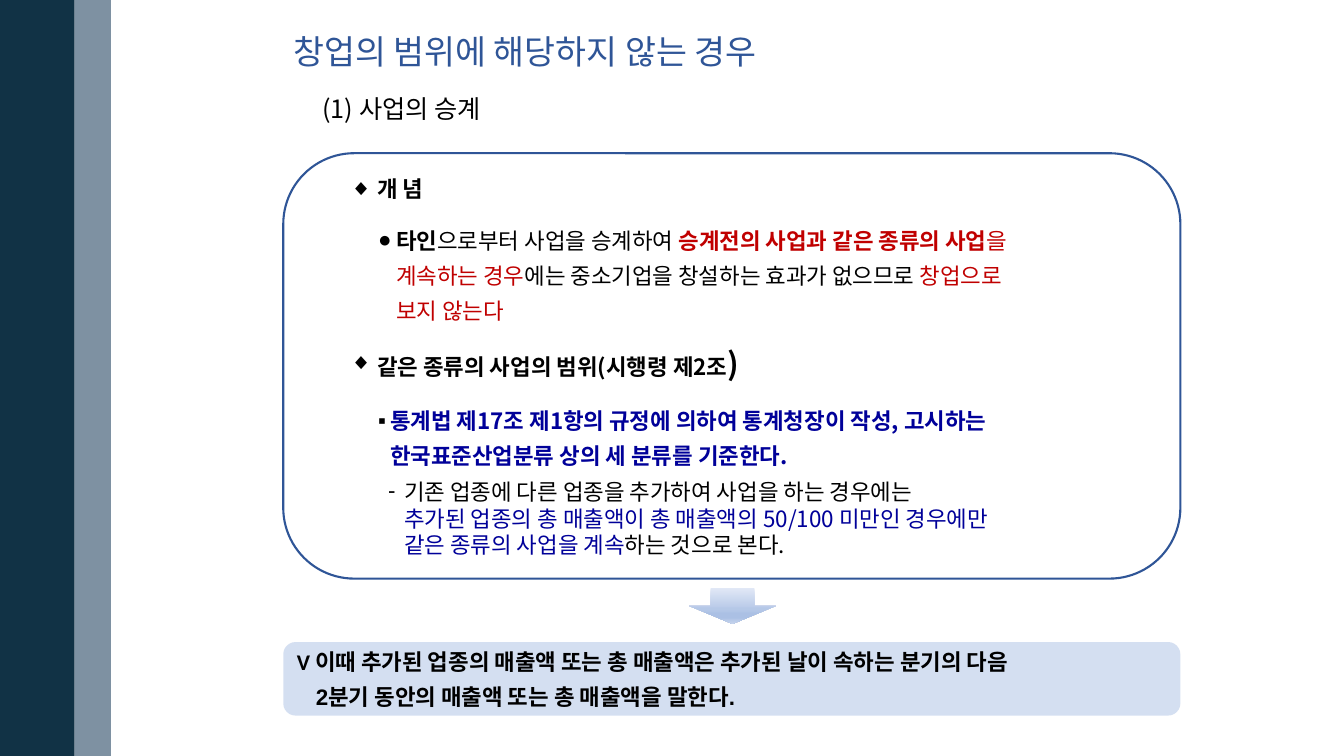
from collections import namedtuple

from lxml.etree import SubElement
from pptx import Presentation
from pptx.dml.color import RGBColor
from pptx.enum.shapes import MSO_SHAPE
from pptx.enum.text import MSO_ANCHOR, MSO_AUTO_SIZE, PP_ALIGN
from pptx.oxml.ns import qn
from pptx.util import Inches, Pt

COLORS = {
    "navy": "113245", "slate": "7E91A2", "blue": "2F5597", "black": "000000",
    "red": "C00000", "indigo": "000099", "pale": "B4C7E7",
}
ARROW_STOPS = [(0, "E1E8F6"), (74, "ABC0E4"), (83, "ABC0E4"), (100, "C7D5ED")]
KOREAN = "Noto Sans CJK KR"
SLIDE_W, SLIDE_H = Inches(13.33), Inches(7.5)

Box = namedtuple("Box", "left top width height")


def inside(box, dx, dy, width, height):
    """Return a box offset from the corner of another, in percent of the slide."""
    return Box(box.left + dx, box.top + dy, width, height)


def emu(box):
    """Turn a box in percent of the slide into lengths."""
    return (int(SLIDE_W * box.left / 100), int(SLIDE_H * box.top / 100),
            int(SLIDE_W * box.width / 100), int(SLIDE_H * box.height / 100))


def add_block(slide, box, preset, fill=None, line=None):
    """Draw a preset shape without shadow."""
    block = slide.shapes.add_shape(preset, *emu(box))
    block.shadow.inherit = False
    if fill:
        block.fill.solid()
        block.fill.fore_color.rgb = RGBColor.from_string(COLORS[fill])
    else:
        block.fill.background()
    if line:
        block.line.color.rgb = RGBColor.from_string(COLORS[line])
        block.line.width = Pt(1.5)
    else:
        block.line.fill.background()
    return block


def move(holder, box):
    """Place a placeholder and return its text frame, ready for text."""
    holder.left, holder.top, holder.width, holder.height = emu(box)
    frame = holder.text_frame
    frame.auto_size = MSO_AUTO_SIZE.NONE
    frame.word_wrap = True
    frame.vertical_anchor = MSO_ANCHOR.TOP
    return frame


def style(font, size=None, bold=None, color=None, name=None):
    """Set the given properties of a font."""
    if size:
        font.size = Pt(size)
    if bold is not None:
        font.bold = bold
    if color:
        font.color.rgb = RGBColor.from_string(COLORS[color])
    if name:
        font.name = name


def write(frame, runs, bullet=None, margin=0, hang=0, size=16, pitch=19.2,
          bold=False, color="black", name=KOREAN):
    """Write a paragraph; a run is text, or text with its own font settings."""
    first = not frame.text
    paragraph = frame.paragraphs[0] if first else frame.add_paragraph()
    props = paragraph._p.get_or_add_pPr()
    props.set("marL", str(Inches(margin)))
    props.set("indent", str(-Inches(hang)))
    if bullet:
        bullet_color = SubElement(props, qn("a:buClr"))
        SubElement(bullet_color, qn("a:srgbClr"), val=COLORS["black"])
        SubElement(props, qn("a:buFont"), typeface="Arial")
        SubElement(props, qn("a:buChar"), char=bullet)
    else:
        SubElement(props, qn("a:buNone"))
    paragraph.alignment = PP_ALIGN.LEFT
    paragraph.line_spacing = Pt(pitch)
    paragraph.space_before = Pt(0 if first else 6)
    style(paragraph.font, size, bold, color, name)
    SubElement(props.find(qn("a:defRPr")), qn("a:ea"), typeface=KOREAN)
    for item in runs:
        text, own = (item, {}) if isinstance(item, str) else item
        if text == "\n":
            paragraph.add_line_break()
            continue
        run = paragraph.add_run()
        run.text = text
        style(run.font, **own)


def draw_sidebar(slide, box):
    """Draw the two vertical bands at the left edge."""
    dark = 5.55
    add_block(slide, box._replace(width=dark), MSO_SHAPE.RECTANGLE, "navy")
    add_block(slide, inside(box, dark, 0, box.width - dark, box.height),
              MSO_SHAPE.RECTANGLE, "slate")


def draw_header(slide, box):
    """Write the title and the numbered subtitle."""
    title = move(slide.shapes.title, box)
    title.vertical_anchor = MSO_ANCHOR.MIDDLE
    write(title, ["창업의 범위에 해당하지 않는 경우"], size=24, pitch=26, color="blue")
    subtitle = slide.shapes.add_textbox(*emu(inside(box, 2.17, 12, 15.83, 4.93)))
    subtitle.text_frame.word_wrap = True
    write(subtitle.text_frame, ["(1) 사업의 승계"], size=18, pitch=20)


def draw_panel(slide, box):
    """Draw the rounded panel with its two headed lists."""
    add_block(slide, box, MSO_SHAPE.ROUNDED_RECTANGLE, line="blue")
    holders = slide.placeholders
    red, indigo = {"color": "red"}, {"color": "indigo"}

    concept = move(holders[1], inside(box, 4.2, 2.27, 75.2, 6.67))
    write(concept, ["개 념"], "◆", 0.27, 0.27, bold=True)

    meaning = move(holders[2], inside(box, 6.3, 9.07, 72.2, 14.4))
    write(meaning, [("타인", {"bold": True}), "으로부터 사업을 승계하여 ",
                    ("승계전의 사업과 같은 종류의 사업", {"color": "red", "bold": True}),
                    ("을", red)], "●", 0.18, 0.18)
    write(meaning, [("계속하는 경우", red), "에는 중소기업을 창설하는 효과가 없으므로 ",
                    ("창업으로", red)], margin=0.18)
    write(meaning, ["보지 않는다"], margin=0.18, color="red")

    scope = move(holders[3], inside(box, 4.2, 24.53, 75.1, 7.47))
    write(scope, ["같은 종류의 사업의 범위(시행령 제2조", (")", {"size": 22})],
          "◆", 0.27, 0.27, pitch=27, bold=True)

    standard = move(holders[4], inside(box, 6.3, 32.93, 72.6, 26.27))
    write(standard, ["통계법 제17조 제1항의 규정에 의하여 통계청장이 작성, 고시하는"],
          "▪", 0.12, 0.12, bold=True, color="indigo")
    write(standard, ["한국표준산업분류 상의 세 분류를 기준한다."],
          margin=0.12, bold=True, color="indigo")
    write(standard, ["기존 업종에 다른 업종을 추가하여 사업을 하는 경우에는", "\n",
                     ("추가된 업종의 총 매출액이 총 매출액의 50/100 미만인 경우에만", indigo), "\n",
                     ("같은 종류의 사업을 계속", indigo), "하는 것으로 본다."],
          "-", 0.26, 0.16)


def draw_arrow(slide, box):
    """Draw the shaded arrow that leads to the note."""
    arrow = add_block(slide, box, MSO_SHAPE.DOWN_ARROW)
    arrow.fill.gradient()
    arrow.fill.gradient_angle = 270
    stops = arrow._element.spPr.find(".//" + qn("a:gsLst"))
    for stop in list(stops):
        stops.remove(stop)
    for share, color in ARROW_STOPS:
        stop = SubElement(stops, qn("a:gs"), pos=str(share * 1000))
        SubElement(stop, qn("a:srgbClr"), val=color)


def draw_note(slide, box):
    """Draw the translucent note at the foot of the slide."""
    note = add_block(slide, box, MSO_SHAPE.ROUNDED_RECTANGLE, "pale")
    tint = note._element.spPr.find(qn("a:solidFill")).find(qn("a:srgbClr"))
    SubElement(tint, qn("a:alpha"), val="56000")
    frame = note.text_frame
    frame.word_wrap = True
    frame.vertical_anchor = MSO_ANCHOR.MIDDLE
    write(frame, [("V ", {"name": "Calibri"}),
                  "이때 추가된 업종의 매출액 또는 총 매출액은 추가된 날이 속하는 분기의 다음"],
          margin=0.19, hang=0.19, bold=True, name="Arial")
    write(frame, ["2분기 동안의 매출액 또는 총 매출액을 말한다."],
          margin=0.19, bold=True, name="Arial")


def main():
    """Build the slide and save it."""
    deck = Presentation()
    deck.slide_width, deck.slide_height = SLIDE_W, SLIDE_H
    slide = deck.slides.add_slide(deck.slide_layouts.get_by_name("Comparison"))
    draw_sidebar(slide, Box(0, 0, 8.25, 100))
    draw_header(slide, Box(21.08, 0, 67.05, 14))
    draw_panel(slide, Box(21.08, 20.27, 66.75, 56.27))
    draw_arrow(slide, Box(51.24, 77.73, 6.53, 4.8))
    draw_note(slide, Box(21.08, 84.93, 66.75, 9.73))
    deck.save("out.pptx")


if __name__ == "__main__":
    main()
